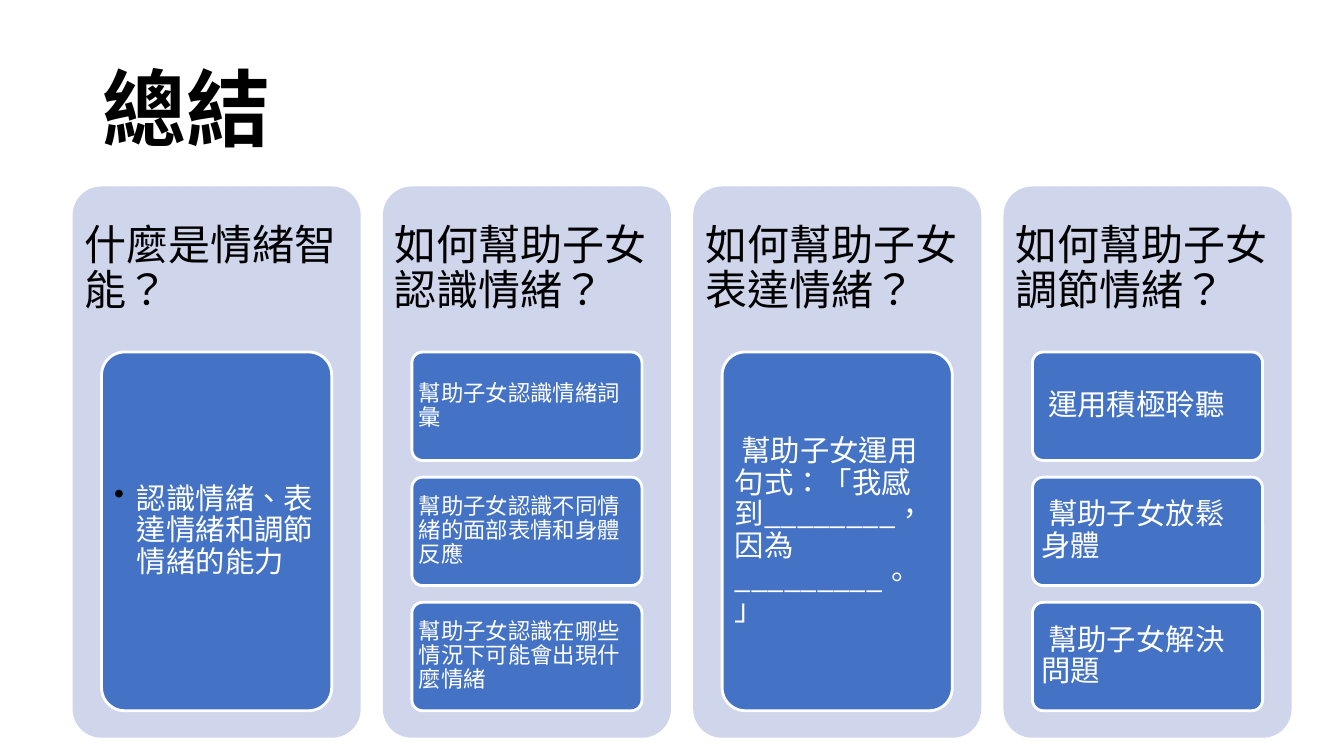
from lxml import etree
from pptx import Presentation
from pptx.dml.color import RGBColor
from pptx.enum import shapes, text
from pptx.oxml import ns
from pptx.util import Cm, Pt

TITLE = "總結"
COLUMNS = [
    {"question": "什麼是情緒智能？", "size": 21, "bullet": True,
     "answers": ["認識情緒、表達情緒和調節情緒的能力"]},
    {"question": "如何幫助子女認識情緒？", "size": 16, "bullet": False,
     "answers": ["幫助子女認識情緒詞彙",
                 "幫助子女認識不同情緒的面部表情和身體反應",
                 "幫助子女認識在哪些情況下可能會出現什麼情緒"]},
    {"question": "如何幫助子女表達情緒？", "size": 21, "bullet": False,
     "answers": [" 幫助子女運用句式：「我感到________，因為_________。」"]},
    {"question": "如何幫助子女調節情緒？", "size": 21, "bullet": False,
     "answers": [" 運用積極聆聽", " 幫助子女放鬆身體", " 幫助子女解決問題"]},
]

TITLE_FONT, BODY_FONT = "Noto Sans CJK TC", "Noto Sans CJK SC"
BLACK, WHITE, PANEL, CARD = "000000", "FFFFFF", "CFD5EA", "4472C4"

LEFT, TOP, PITCH, WIDTH, HEIGHT = 1.83, 4.7, 7.82, 7.26, 13.89
QUESTION_HEIGHT = 4.17
CARD_INSET, CARDS_HEIGHT, CARD_GAP = 0.73, 9.04, 0.42
HANGING = 0.57


def color(value):
    return RGBColor.from_string(value)


def write(frame, words, font, size, ink, margins, bold=False):
    frame.text = words
    frame.word_wrap = True
    frame.auto_size = text.MSO_AUTO_SIZE.NONE
    frame.vertical_anchor = text.MSO_ANCHOR.MIDDLE
    frame.margin_left = frame.margin_right = Cm(margins[0])
    frame.margin_top = frame.margin_bottom = Cm(margins[1])
    paragraph = frame.paragraphs[0]
    paragraph.alignment = text.PP_ALIGN.LEFT
    paragraph.line_spacing = 0.9
    run = paragraph.runs[0]
    run.font.name = font
    run.font.size = Pt(size)
    run.font.bold = bold
    run.font.color.rgb = color(ink)
    properties = run._r.get_or_add_rPr()
    properties.set("lang", "zh-TW")
    east_asian = etree.SubElement(properties, ns.qn("a:ea"))
    east_asian.set("typeface", font)
    return paragraph


def add_bullet(paragraph):
    properties = paragraph._p.get_or_add_pPr()
    properties.set("marL", str(Cm(HANGING)))
    properties.set("indent", str(-Cm(HANGING)))
    tint = etree.SubElement(properties, ns.qn("a:buClr"))
    etree.SubElement(tint, ns.qn("a:srgbClr")).set("val", BLACK)
    etree.SubElement(properties, ns.qn("a:buChar")).set("char", "•")


def add_rounded(slide, left, top, width, height, fill, outline=None):
    box = slide.shapes.add_shape(
        shapes.MSO_SHAPE.ROUNDED_RECTANGLE,
        Cm(left), Cm(top), Cm(width), Cm(height))
    box.adjustments[0] = 0.1
    box.shadow.inherit = False
    box.fill.solid()
    box.fill.fore_color.rgb = color(fill)
    if outline:
        box.line.color.rgb = color(outline)
        box.line.width = Pt(2)
    else:
        box.line.fill.background()
    return box


def add_column(slide, left, column):
    add_rounded(slide, left, TOP, WIDTH, HEIGHT, PANEL)
    question = slide.shapes.add_textbox(
        Cm(left), Cm(TOP), Cm(WIDTH), Cm(QUESTION_HEIGHT))
    write(question.text_frame, column["question"], BODY_FONT, 30, BLACK, (0.3, 0.3))

    answers = column["answers"]
    height = (CARDS_HEIGHT - CARD_GAP * (len(answers) - 1)) / len(answers)
    margins = (0.15, 0.1) if column["size"] > 16 else (0.1, 0.08)
    for row, answer in enumerate(answers):
        top = TOP + QUESTION_HEIGHT + row * (height + CARD_GAP)
        card = add_rounded(slide, left + CARD_INSET, top,
                           WIDTH - 2 * CARD_INSET, height, CARD, WHITE)
        paragraph = write(card.text_frame, answer, BODY_FONT,
                          column["size"], WHITE, margins)
        if column["bullet"]:
            add_bullet(paragraph)


def main():
    deck = Presentation()
    deck.slide_width, deck.slide_height = Cm(33.87), Cm(19.05)
    slide = deck.slides.add_slide(deck.slide_layouts[5])
    title = slide.shapes.title
    title.left, title.top = Cm(2.33), Cm(1.01)
    title.width, title.height = Cm(29.21), Cm(3.68)
    write(title.text_frame, TITLE, TITLE_FONT, 60, BLACK, (0.25, 0.13), bold=True)
    for index, column in enumerate(COLUMNS):
        add_column(slide, LEFT + index * PITCH, column)
    deck.save("out.pptx")


if __name__ == "__main__":
    main()
